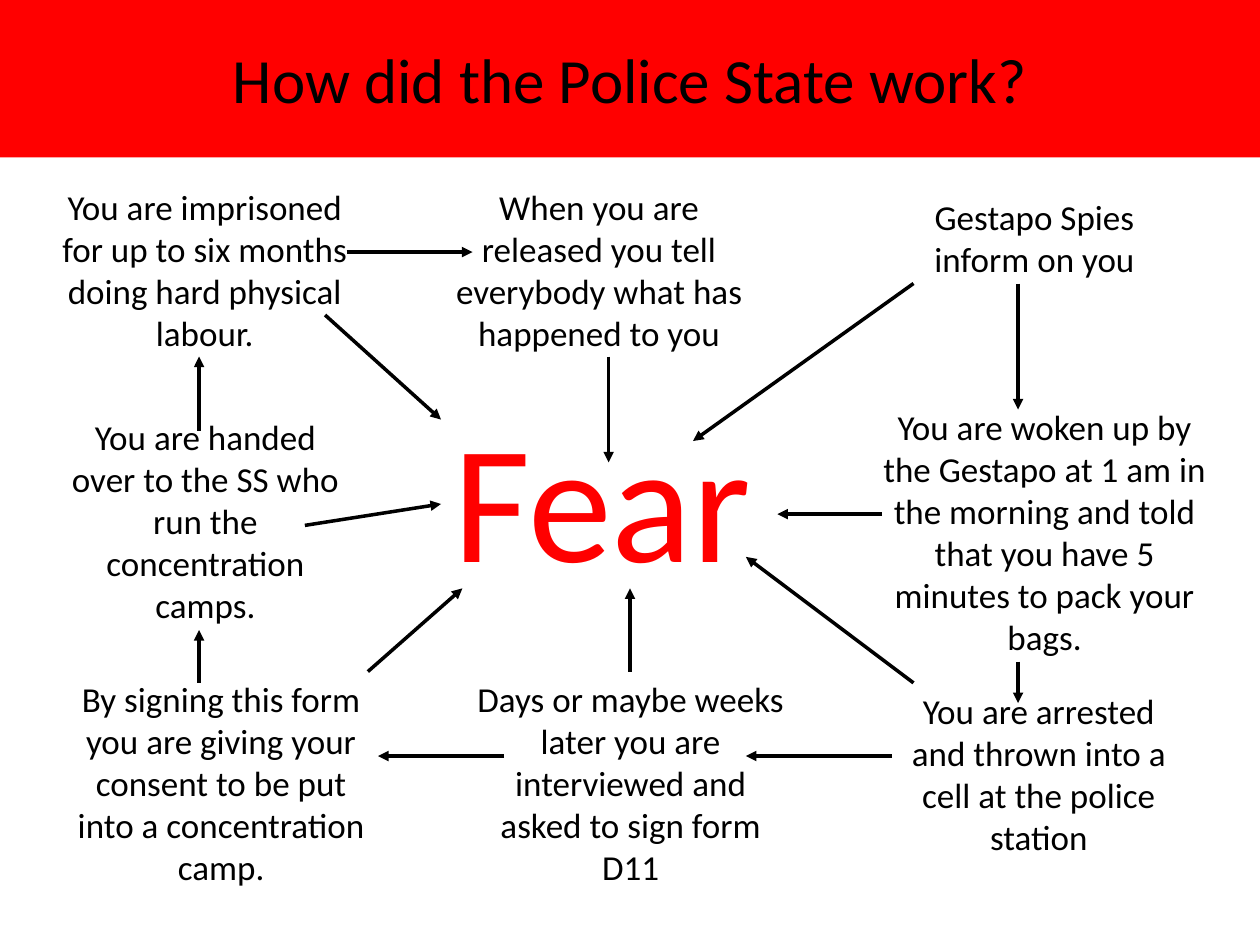
from collections import namedtuple

from lxml import etree
from pptx import Presentation
from pptx.dml.color import RGBColor
from pptx.enum.shapes import MSO_CONNECTOR
from pptx.enum.text import MSO_ANCHOR, PP_ALIGN
from pptx.oxml.ns import qn
from pptx.util import Inches, Pt

COLORS = {"ink": "000000", "alarm": "FF0000", "paper": "FFFFFF"}
FONT = "Calibri"

Box = namedtuple("Box", "left top width height")

# Each step: box, wording, then its arrow (start and end measured from the box corner).
STEPS = [
    (Box(7.17, 1.5, 2.08, 0.77), "Gestapo Spies inform on you",
     ((0.91, 0.75), (0.91, 1.75))),
    (Box(6.83, 3.17, 2.92, 2.12),
     "You are woken up by the Gestapo at 1 am in the morning and told "
     "that you have 5 minutes to pack your bags.",
     ((1.25, 2.08), (1.25, 2.41))),
    (Box(7.08, 5.42, 2.33, 1.43),
     "You are arrested and thrown into a cell at the police station",
     ((0, 0.58), (-1.16, 0.58))),
    (Box(3.67, 5.33, 2.67, 1.77),
     "Days or maybe weeks later you are interviewed and asked to sign form D11",
     ((0.33, 0.67), (-0.67, 0.67))),
    (Box(0.42, 5.33, 2.67, 1.78),
     "By signing this form you are giving your consent to be put into "
     "a concentration camp.",
     ((1.16, 0.09), (1.16, -0.33))),
    (Box(0.42, 3.25, 2.42, 1.77),
     "You are handed over to the SS who run the concentration camps.",
     ((1.16, 0.17), (1.16, -0.42))),
    (Box(0.25, 1.42, 2.75, 1.43),
     "You are imprisoned for up to six months doing hard physical labour.",
     ((2.5, 0.58), (3.5, 0.58))),
    (Box(3.42, 1.42, 2.67, 1.43),
     "When you are released you tell everybody what has happened to you",
     ((1.41, 1.41), (1.41, 2.25))),
]

FEAR_BOX = Box(3.5, 3.08, 2.75, 1.7)
FEAR_ARROWS = [
    ((-0.58, 2.25), (0.17, 1.59)),
    ((1.5, 2.25), (1.5, 1.59)),
    ((3.75, 2.34), (2.42, 1.34)),
    ((3.5, 1), (2.67, 1)),
    ((3.75, -0.83), (2, 0.42)),
    ((-0.92, -0.58), (0, 0.25)),
    ((-1.08, 1.09), (0, 0.92)),
]


def write(frame, text, size=20, color="ink", align=PP_ALIGN.CENTER,
          anchor=MSO_ANCHOR.TOP):
    frame.word_wrap = True
    frame.vertical_anchor = anchor
    paragraph = frame.paragraphs[0]
    paragraph.alignment = align
    run = paragraph.add_run()
    run.text = text
    run.font.size = Pt(size)
    run.font.name = FONT
    run.font.color.rgb = RGBColor.from_string(COLORS[color])


def add_arrow(slide, box, start, end):
    """Draw an arrow whose ends are offsets from the corner of the box."""
    ends = [Inches(corner + offset) for point in (start, end)
            for corner, offset in zip((box.left, box.top), point)]
    arrow = slide.shapes.add_connector(MSO_CONNECTOR.STRAIGHT, *ends)
    arrow.line.width = Pt(2)
    arrow.line.color.rgb = RGBColor.from_string(COLORS["ink"])
    etree.SubElement(arrow.line._get_or_add_ln(), qn("a:tailEnd"), type="triangle")
    etree.SubElement(arrow._element.spPr, qn("a:effectLst"))


def add_label(slide, box, text, **text_format):
    label = slide.shapes.add_textbox(*map(Inches, box))
    write(label.text_frame, text, **text_format)


def add_title_band(slide, box, text):
    title = slide.shapes.title
    title.left, title.top, title.width, title.height = map(Inches, box)
    title.fill.solid()
    title.fill.fore_color.rgb = RGBColor.from_string(COLORS["alarm"])
    write(title.text_frame, text, size=36, anchor=MSO_ANCHOR.MIDDLE)


def add_step(slide, box, text, arrow):
    add_label(slide, box, text)
    add_arrow(slide, box, *arrow)


def add_fear_hub(slide, box, arrows):
    add_label(slide, box, "Fear", size=96, color="alarm", align=PP_ALIGN.LEFT)
    for arrow in arrows:
        add_arrow(slide, box, *arrow)


def main():
    deck = Presentation()
    deck.slide_width, deck.slide_height = Inches(10), Inches(7.5)
    slide = deck.slides.add_slide(deck.slide_layouts[5])
    slide.background.fill.solid()
    slide.background.fill.fore_color.rgb = RGBColor.from_string(COLORS["paper"])

    add_title_band(slide, Box(0, 0, 10, 1.25), "How did the Police State work?")
    for step in STEPS:
        add_step(slide, *step)
    add_fear_hub(slide, FEAR_BOX, FEAR_ARROWS)
    deck.save("out.pptx")


if __name__ == "__main__":
    main()
